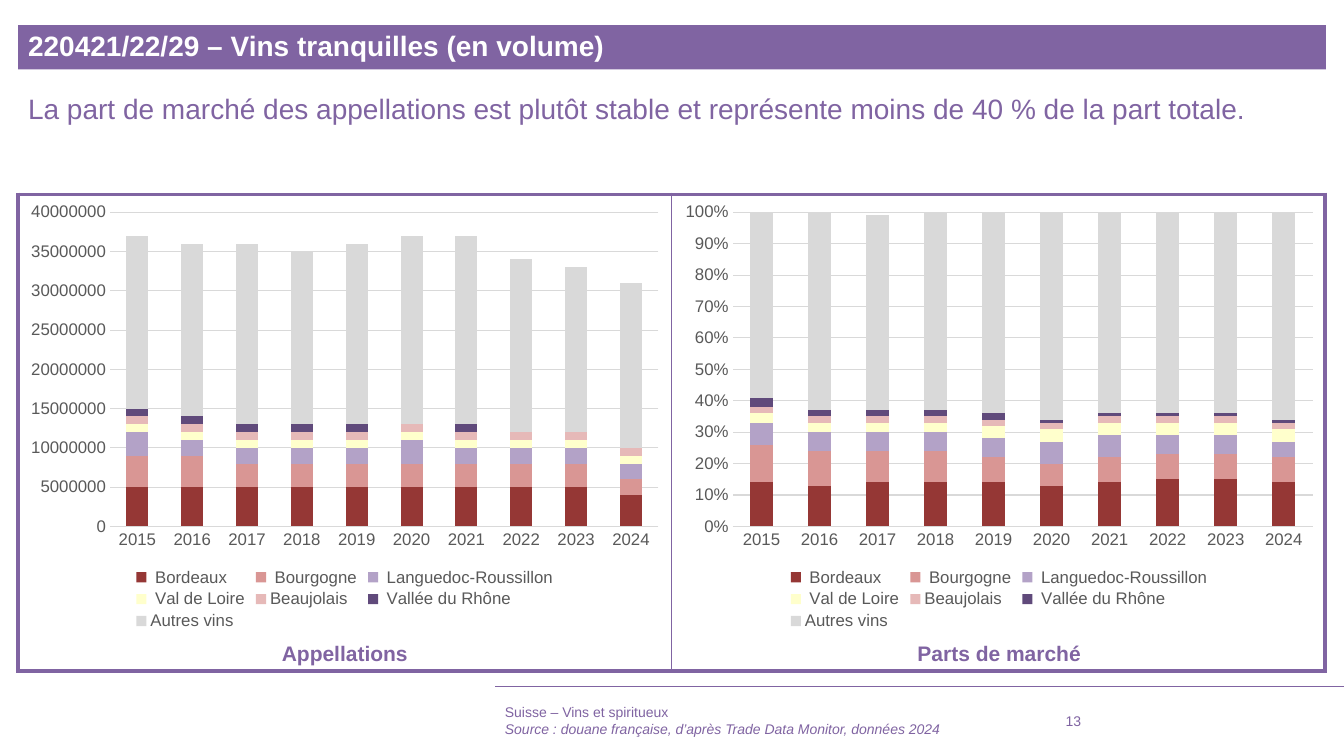
from lxml.etree import SubElement as Sub
from pptx import Presentation
from pptx.chart.data import CategoryChartData as Data
from pptx.dml.color import RGBColor
from pptx.enum.chart import XL_CHART_TYPE as Kind, XL_LEGEND_POSITION as Place, XL_TICK_MARK as Tick
from pptx.enum.shapes import MSO_CONNECTOR as Link, MSO_SHAPE as Shape
from pptx.enum.text import MSO_ANCHOR as Anchor, PP_ALIGN as Align
from pptx.oxml.ns import qn
from pptx.util import Inches, Pt

PURPLE = RGBColor(0x80, 0x64, 0xA2)
WHITE = RGBColor(0xFF, 0xFF, 0xFF)
GREY = RGBColor(0x59, 0x59, 0x59)
PALE = RGBColor(0xD9, 0xD9, 0xD9)
COLORS = [
    RGBColor(0x95, 0x37, 0x35),
    RGBColor(0xD9, 0x96, 0x94),
    RGBColor(0xB3, 0xA2, 0xC7),
    RGBColor(0xFF, 0xFF, 0xCC),
    RGBColor(0xE6, 0xB9, 0xB8),
    RGBColor(0x60, 0x4A, 0x7B),
    PALE,
]
FONT = "Arial"
LEFT, TOP, HALF = 0.18, 1.93, 6.48
YEARS = [str(year) for year in range(2015, 2025)]
WINES = [" Bordeaux", " Bourgogne", " Languedoc-Roussillon", " Val de Loire",
         "Beaujolais", " Vallée du Rhône", "Autres vins"]
MILLIONS = [
    [5, 5, 5, 5, 5, 5, 5, 5, 5, 4],
    [4, 4, 3, 3, 3, 3, 3, 3, 3, 2],
    [3, 2, 2, 2, 2, 3, 2, 2, 2, 2],
    [1, 1, 1, 1, 1, 1, 1, 1, 1, 1],
    [1, 1, 1, 1, 1, 1, 1, 1, 1, 1],
    [1, 1, 1, 1, 1, 0, 1, 0, 0, 0],
    [22, 22, 23, 22, 23, 24, 24, 22, 21, 21],
]
SHARES = [
    [0.14, 0.13, 0.14, 0.14, 0.14, 0.13, 0.14, 0.15, 0.15, 0.14],
    [0.12, 0.11, 0.10, 0.10, 0.08, 0.07, 0.08, 0.08, 0.08, 0.08],
    [0.07, 0.06, 0.06, 0.06, 0.06, 0.07, 0.07, 0.06, 0.06, 0.05],
    [0.03, 0.03, 0.03, 0.03, 0.04, 0.04, 0.04, 0.04, 0.04, 0.04],
    [0.02, 0.02, 0.02, 0.02, 0.02, 0.02, 0.02, 0.02, 0.02, 0.02],
    [0.03, 0.02, 0.02, 0.02, 0.02, 0.01, 0.01, 0.01, 0.01, 0.01],
    [0.60, 0.63, 0.62, 0.63, 0.65, 0.66, 0.64, 0.64, 0.65, 0.66],
]


def style(font, size, color, bold=False):
    """Set the font, size, colour and weight."""
    font.name, font.size, font.bold = FONT, Pt(size), bold
    font.color.rgb = color


def write(shape, text, size, color=PURPLE, bold=False, align=Align.LEFT, anchor=Anchor.TOP):
    """Fill a shape with evenly styled text."""
    frame = shape.text_frame
    frame.word_wrap = True
    frame.vertical_anchor = anchor
    frame.text = text
    for para in frame.paragraphs:
        para.alignment = align
        for run in para.runs:
            style(run.font, size, color, bold)
    return frame


def add_text(slide, box, text, size, **look):
    """Add a text box at the given place."""
    shape = slide.shapes.add_textbox(*map(Inches, box))
    return write(shape, text, size, **look)


def add_title(slide, text):
    """Add the filled title band."""
    band = slide.shapes.add_shape(
        Shape.RECTANGLE, Inches(LEFT), Inches(0.25), Inches(12.97), Inches(0.44))
    band.shadow.inherit = False
    band.fill.solid()
    band.fill.fore_color.rgb = PURPLE
    band.line.fill.background()
    frame = write(band, text, 20, WHITE, True, anchor=Anchor.MIDDLE)
    frame.paragraphs[0].line_spacing = 0.9


def add_rule(slide):
    """Add the thin line above the footer."""
    rule = slide.shapes.add_connector(
        Link.STRAIGHT, Inches(13.33), Inches(6.81), Inches(4.91), Inches(6.81))
    rule.line.color.rgb = PURPLE
    rule.line.width = Pt(0.5)
    Sub(rule._element.spPr, qn("a:effectLst"))


def add_edge(cell, side, width):
    """Draw one border of a cell."""
    edge = Sub(cell._tc.get_or_add_tcPr(), qn(f"a:ln{side}"), w=str(Pt(width)))
    fill = Sub(edge, qn("a:solidFill"))
    Sub(fill, qn("a:srgbClr"), val=str(PURPLE))


def add_frame(slide):
    """Add the two-cell table that frames the charts."""
    table = slide.shapes.add_table(
        1, 2, Inches(LEFT), Inches(TOP), Inches(2 * HALF), Inches(4.73)).table
    table.first_row = table.horz_banding = False
    for cell, widths in zip(table.iter_cells(), [(3, 1, 3, 3), (1, 3, 3, 3)]):
        for side, width in zip("LRTB", widths):
            add_edge(cell, side, width)
        cell.fill.background()


def add_bars(slide, left, rows, form):
    """Add a stacked column chart and return its value axis."""
    data = Data(number_format=form)
    data.categories = YEARS
    for wine, row in zip(WINES, rows):
        data.add_series(wine, row)
    chart = slide.shapes.add_chart(
        Kind.COLUMN_STACKED, Inches(left), Inches(TOP), Inches(HALF), Inches(4.36), data).chart
    style(chart.font, 12, GREY)
    chart.has_title = False
    chart.has_legend = True
    chart.legend.position = Place.BOTTOM
    chart.legend.include_in_layout = False
    style(chart.legend.font, 12, GREY)
    plot = chart.plots[0]
    plot.gap_width, plot.overlap = 150, 100
    plot.vary_by_categories = False
    for bar, color in zip(plot.series, COLORS):
        bar.format.fill.solid()
        bar.format.fill.fore_color.rgb = color
    cats, vals = chart.category_axis, chart.value_axis
    for axis in (cats, vals):
        axis.major_tick_mark = axis.minor_tick_mark = Tick.NONE
        style(axis.tick_labels.font, 12, GREY)
    vals.format.line.fill.background()
    for part in (cats, vals.major_gridlines):
        part.format.line.color.rgb = PALE
        part.format.line.width = Pt(0.75)
    vals.tick_labels.number_format = form
    vals.tick_labels.number_format_is_linked = False
    vals.minimum_scale = 0
    return vals


def main():
    """Build and save the slide."""
    deck = Presentation()
    deck.slide_width, deck.slide_height = Inches(13.33), Inches(7.5)
    slide = deck.slides.add_slide(deck.slide_layouts[6])
    add_rule(slide)
    add_frame(slide)
    right = LEFT + HALF + 0.01
    for left, name in [(LEFT, "Appellations"), (right, "Parts de marché")]:
        add_text(slide, (left, 6.31, HALF, 0.35), name, 15, bold=True, align=Align.CENTER)
    foot = add_text(
        slide, (4.91, 6.95, 5.43, 0.4),
        "Suisse – Vins et spiritueux\n"
        "Source : douane française, d’après Trade Data Monitor, données 2024",
        10, anchor=Anchor.MIDDLE)
    foot.paragraphs[1].runs[0].font.italic = True
    add_text(slide, (10.47, 6.95, 0.99, 0.4), "13", 10, anchor=Anchor.MIDDLE)
    add_title(slide, "220421/22/29 – Vins tranquilles (en volume)")
    lead = add_text(
        slide, (LEFT, 0.9, 2 * HALF, 0.81),
        "La part de marché des appellations est plutôt stable et représente "
        "moins de 40 % de la part totale.", 20)
    lead.paragraphs[0].line_spacing = 0.9
    litres = [[value * 1000000 for value in row] for row in MILLIONS]
    add_bars(slide, LEFT, litres, "General").maximum_scale = 40000000
    axis = add_bars(slide, right, SHARES, "0%")
    axis.maximum_scale, axis.major_unit = 1, 0.1
    deck.save("out.pptx")


if __name__ == "__main__":
    main()
